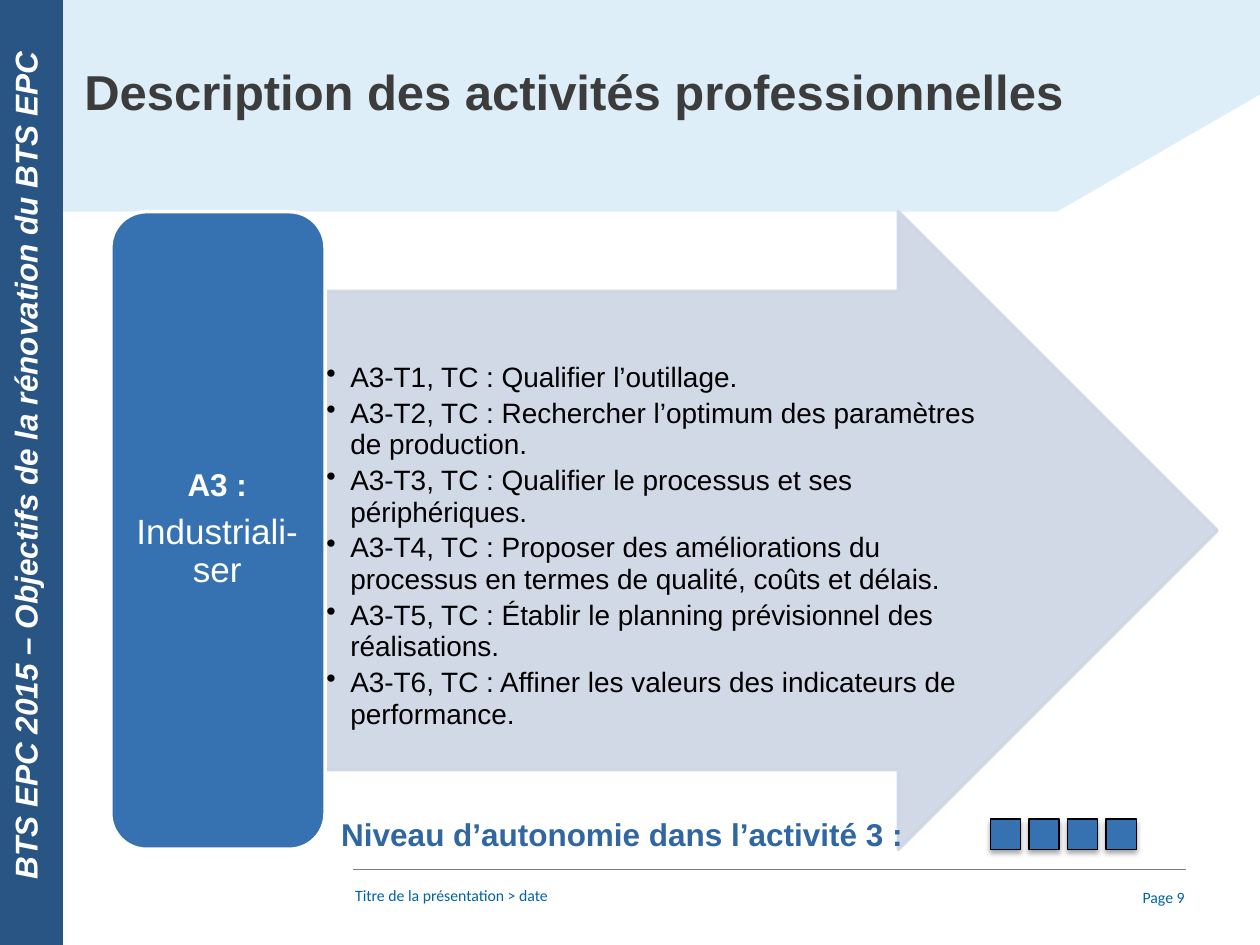
from lxml import etree
from pptx import Presentation
from pptx.dml.color import RGBColor
from pptx.enum.shapes import MSO_CONNECTOR, MSO_SHAPE
from pptx.enum.text import MSO_ANCHOR, PP_ALIGN
from pptx.oxml.ns import qn
from pptx.util import Inches, Pt

RECT, ROUND = MSO_SHAPE.RECTANGLE, MSO_SHAPE.ROUNDED_RECTANGLE
ARROW = MSO_SHAPE.RIGHT_ARROW
STRAIGHT = MSO_CONNECTOR.STRAIGHT
TOP, MID = MSO_ANCHOR.TOP, MSO_ANCHOR.MIDDLE
LEFT, MIDDLE, RIGHT = PP_ALIGN.LEFT, PP_ALIGN.CENTER, PP_ALIGN.RIGHT

WIDE, HIGH = Inches(10), Inches(7.5)
BLUE, NAVY, PALE, GREY = "3671B2", "295585", "DEEEF8", "CED5E4"
WHITE, BLACK, LINK = "FFFFFF", "000000", "0062A8"

TASKS = [
    "A3-T1, TC : Qualifier l’outillage.",
    "A3-T2, TC : Rechercher l’optimum des paramètres de production.",
    "A3-T3, TC : Qualifier le processus et ses périphériques.",
    "A3-T4, TC : Proposer des améliorations du processus en termes de "
    "qualité, coûts et délais.",
    "A3-T5, TC : Établir le planning prévisionnel des réalisations.",
    "A3-T6, TC : Affiner les valeurs des indicateurs de performance.",
]


# Lengths are percentages of the slide's width and height
def px(share):
    return round(WIDE * share / 100)


def py(share):
    return round(HIGH * share / 100)


def place(x, y, w, h):
    return px(x), py(y), px(w), py(h)


def rgb(code):
    return RGBColor.from_string(code)


def child(node, tag, **attrs):
    item = etree.SubElement(node, qn(tag))
    for name, value in attrs.items():
        item.set(name, str(value))
    return item


def paint(shape, fill, line=None, width=0):
    shape.shadow.inherit = False
    shape.fill.solid()
    shape.fill.fore_color.rgb = rgb(fill)
    if line:
        shape.line.color.rgb = rgb(line)
        shape.line.width = Pt(width)
    else:
        shape.line.fill.background()


def block(slide, kind, area, fill, line=None, width=0):
    shape = slide.shapes.add_shape(kind, *place(*area))
    paint(shape, fill, line, width)
    return shape


def fade(shape, share):
    for color in shape._element.spPr.iter(qn("a:srgbClr")):
        child(color, "a:alpha", val=share * 1000)


def shade(shape):
    effects = shape._element.spPr.find(qn("a:effectLst"))
    shadow = child(effects, "a:outerShdw", blurRad=Pt(3.1), dist=Pt(1.8),
                   dir=90 * 60000, rotWithShape=0)
    color = child(shadow, "a:srgbClr", val=BLACK)
    child(color, "a:alpha", val=35000)


def frame(shape, pads=(0.1, 0.05), anchor=TOP):
    text = shape.text_frame
    text.word_wrap = True
    text.vertical_anchor = anchor
    text.margin_left = text.margin_right = Inches(pads[0])
    text.margin_top = text.margin_bottom = Inches(pads[1])
    return text


def textbox(slide, area, pads=(0.1, 0.05), anchor=TOP):
    return frame(slide.shapes.add_textbox(*place(*area)), pads, anchor)


def write(para, words, size, color, bold=False, italic=False,
          face="Arial", align=LEFT):
    para.alignment = align
    run = para.add_run()
    run.text = words
    font = run.font
    font.name, font.size = face, Pt(size)
    font.bold, font.italic = bold, italic
    font.color.rgb = rgb(color)


def space(para, lines, after):
    para.line_spacing = lines
    para.space_after = Pt(after)


def indent(para, left, first=0):
    props = para._p.get_or_add_pPr()
    props.set("marL", str(Inches(left)))
    props.set("indent", str(Inches(first)))
    return props


def banner(slide):
    pen = slide.shapes.build_freeform(px(100), 0)
    corners = [(0, 0), (0, 22.4), (83.9, 22.4), (100, 10)]
    pen.add_line_segments([(px(x), py(y)) for x, y in corners], close=True)
    paint(pen.convert_to_shape(), PALE)


def footer(slide):
    rule = slide.shapes.add_connector(STRAIGHT, px(28), py(92),
                                      px(94.1), py(92))
    rule.line.color.rgb = rgb("7F7F7F")
    rule.line.width = Pt(0.5)
    child(rule._element.spPr, "a:effectLst")
    note = textbox(slide, (27.2, 93.1, 59.1, 3.3))
    write(note.paragraphs[0], "Titre de la présentation > date", 9, LINK,
          face="Calibri")
    page = textbox(slide, (86.2, 92.7, 8.8, 4.5), anchor=MID)
    write(page.paragraphs[0], "Page 9", 9, LINK, face="Calibri", align=RIGHT)


def tasks(slide):
    arrow = block(slide, ARROW, (25.8, 22.4, 70.8, 67.47), GREY, GREY, 2)
    arrow.adjustments[0], arrow.adjustments[1] = 0.75, 0.5
    fade(arrow, 90)
    text = textbox(slide, (25.8, 38.2, 51.9, 43), (0.01, 0.01))
    for i, task in enumerate(TASKS):
        para = text.paragraphs[0] if i == 0 else text.add_paragraph()
        space(para, 0.94, 2.4)
        child(indent(para, 0.19, -0.19), "a:buChar", char="•")
        write(para, task, 16, BLACK)


def label(slide):
    block(slide, ROUND, (8.8, 22.4, 17, 67.47), BLUE, WHITE, 2)
    text = textbox(slide, (9.6, 23.47, 15.3, 65.2), (0.07, 0.04), MID)
    head, body = text.paragraphs[0], text.add_paragraph()
    space(head, 0.9, 6.3)
    space(body, 0.9, 7)
    write(head, "A3 :", 18, WHITE, bold=True, align=MIDDLE)
    write(body, "Industriali-ser", 20, WHITE, align=MIDDLE)


def sidebar(slide):
    text = frame(block(slide, RECT, (0, 0, 5, 100), NAVY))
    text._txBody.bodyPr.set("vert", "vert270")
    para = text.paragraphs[0]
    indent(para, 0.42)
    write(para, "BTS EPC 2015 – Objectifs de la rénovation du BTS EPC",
          18, WHITE, bold=True, italic=True)


def level(slide):
    text = textbox(slide, (26.1, 85.6, 59.9, 5.3))
    write(text.paragraphs[0], "Niveau d’autonomie dans l’activité 3 :",
          18, "3066A1", bold=True)
    for i in range(4):
        shade(block(slide, RECT, (78.6 + i * 3.06, 86.67, 2.4, 3.2),
                    BLUE, BLACK, 0.75))


def main():
    deck = Presentation()
    deck.slide_width, deck.slide_height = WIDE, HIGH
    slide = deck.slides.add_slide(deck.slide_layouts[6])
    # Page frame
    banner(slide)
    footer(slide)
    title = textbox(slide, (6.7, 3.87, 90, 11.6), (0, 0), MID)
    write(title.paragraphs[0], "Description des activités professionnelles",
          28, "3C3C3C", bold=True)
    # Activity and its tasks
    tasks(slide)
    label(slide)
    # Side title and autonomy level
    sidebar(slide)
    level(slide)
    deck.save("out.pptx")


if __name__ == "__main__":
    main()
